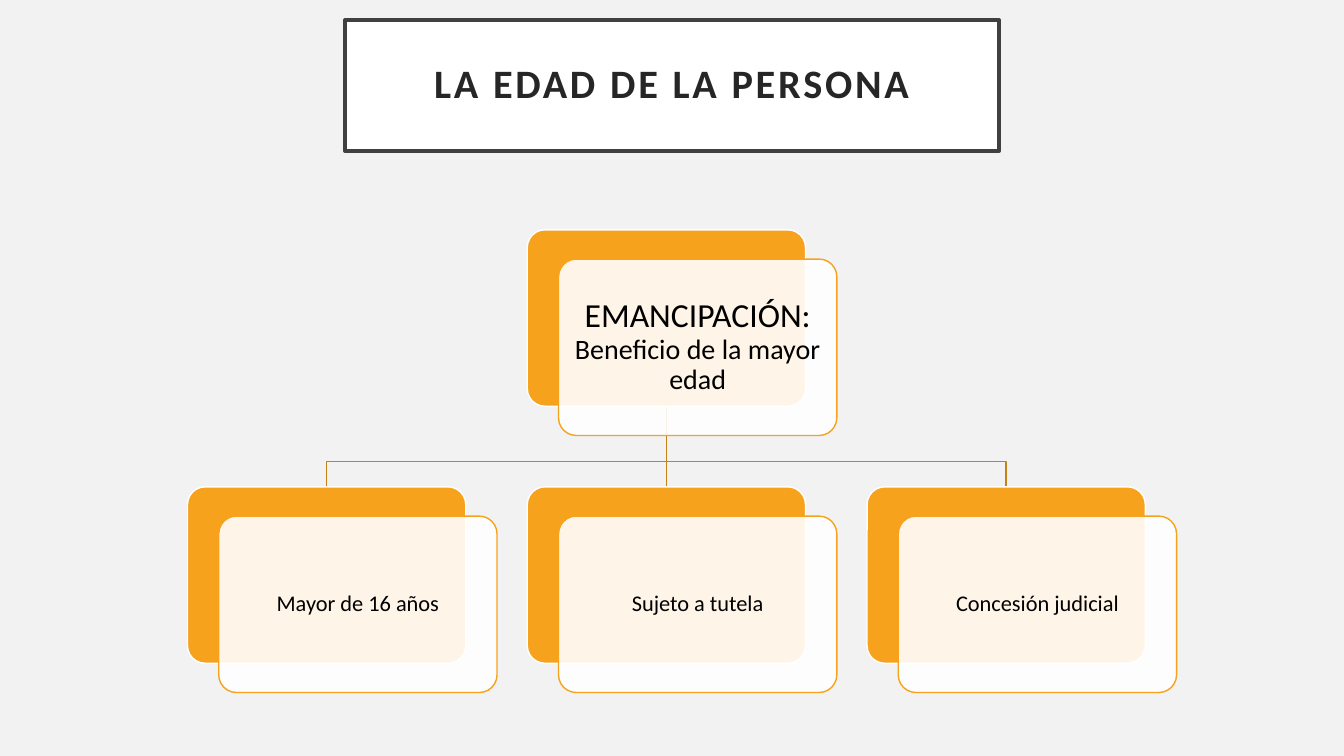
from lxml import etree
from pptx import Presentation
from pptx.dml.color import RGBColor
from pptx.enum.shapes import MSO_CONNECTOR, MSO_SHAPE
from pptx.enum.text import MSO_ANCHOR, MSO_AUTO_SIZE, PP_ALIGN
from pptx.oxml.ns import qn
from pptx.util import Inches, Pt

ORANGE, BROWN, WHITE, BLACK = "F6A21D", "C58217", "FFFFFF", "000000"
CARD_WIDTH, CARD_HEIGHT = 2.76, 1.75
SHIFT_X, SHIFT_Y = 0.31, 0.29
LABEL_MARGIN = 0.05
ROOT_LEFT, ROOT_TOP = 5.23, 2.28
CHILD_TOP, CHILD_STEP = 4.83, 3.37
BEND_Y = 4.58


def color(hex_string):
    return RGBColor.from_string(hex_string)


class Diagram:
    """Holds the text style and the slide that is being built."""

    def __init__(self, slide, font="Calibri"):
        self.slide = slide
        self.shapes = slide.shapes
        self.font = font

    def background(self, fill):
        self.slide.background.fill.solid()
        self.slide.background.fill.fore_color.rgb = color(fill)

    def outline(self, shape, line, width=1):
        shape.line.color.rgb = color(line)
        shape.line.width = Pt(width)

    def add_text(self, shape, runs, inset, ink=BLACK, bold=False, spacing=0):
        frame = shape.text_frame
        frame.word_wrap = True
        frame.auto_size = MSO_AUTO_SIZE.NONE
        frame.vertical_anchor = MSO_ANCHOR.MIDDLE
        frame.margin_left = frame.margin_right = Inches(inset)
        frame.margin_top = frame.margin_bottom = Inches(inset)
        paragraph = frame.paragraphs[0]
        paragraph.alignment = PP_ALIGN.CENTER
        paragraph.line_spacing = 0.9
        for text, size in runs:
            run = paragraph.add_run()
            run.text = text
            run.font.name = self.font
            run.font.size = Pt(size)
            run.font.bold = bold
            run.font.color.rgb = color(ink)
            if spacing:
                run._r.get_or_add_rPr().set("spc", str(spacing * 100))

    def title(self, text):
        title = self.shapes.title
        title.left, title.top = Inches(3.42), Inches(0.2)
        title.width, title.height = Inches(6.49), Inches(1.3)
        title.fill.solid()
        title.fill.fore_color.rgb = color(WHITE)
        self.outline(title, "404040", 2.5)
        self.add_text(title, [(text, 28.8)], 0.2, "262626", bold=True, spacing=2)

    def panel(self, left, top, fill, line, opacity=100):
        panel = self.shapes.add_shape(
            MSO_SHAPE.ROUNDED_RECTANGLE, Inches(left), Inches(top),
            Inches(CARD_WIDTH), Inches(CARD_HEIGHT))
        panel.adjustments[0] = 0.1
        panel.shadow.inherit = False
        panel.fill.solid()
        panel.fill.fore_color.rgb = color(fill)
        if opacity < 100:
            tint = panel._element.spPr.find(qn("a:solidFill"))[0]
            etree.SubElement(tint, qn("a:alpha")).set("val", str(opacity * 1000))
        self.outline(panel, line)

    def card(self, left, top, runs, inset):
        front_left, front_top = left + SHIFT_X, top + SHIFT_Y
        self.panel(left, top, ORANGE, WHITE)
        self.panel(front_left, front_top, WHITE, ORANGE, opacity=90)
        label = self.shapes.add_textbox(
            Inches(front_left + LABEL_MARGIN), Inches(front_top + LABEL_MARGIN),
            Inches(CARD_WIDTH - 2 * LABEL_MARGIN),
            Inches(CARD_HEIGHT - 2 * LABEL_MARGIN))
        self.add_text(label, runs, inset)

    def straight_link(self, x, top, bottom):
        link = self.shapes.add_connector(
            MSO_CONNECTOR.STRAIGHT, Inches(x), Inches(top), Inches(x), Inches(bottom))
        self.outline(link, BROWN)
        etree.SubElement(link._element.spPr, qn("a:effectLst"))

    def bent_link(self, start_x, top, end_x, bottom):
        builder = self.shapes.build_freeform(Inches(start_x), Inches(top))
        corners = [(start_x, BEND_Y), (end_x, BEND_Y), (end_x, bottom)]
        builder.add_line_segments(
            [(Inches(x), Inches(y)) for x, y in corners], close=False)
        link = builder.convert_to_shape()
        link.shadow.inherit = False
        link.fill.background()
        self.outline(link, BROWN)


def main():
    presentation = Presentation()
    presentation.slide_width = Inches(13.33)
    presentation.slide_height = Inches(7.5)
    slide = presentation.slides.add_slide(presentation.slide_layouts[5])
    diagram = Diagram(slide)

    # Background and title
    diagram.background("F2F2F2")
    diagram.title("LA EDAD DE LA PERSONA")

    # Links from the root card to its three conditions
    center_x = ROOT_LEFT + CARD_WIDTH / 2
    root_bottom = ROOT_TOP + CARD_HEIGHT
    diagram.bent_link(center_x, root_bottom, center_x + CHILD_STEP, CHILD_TOP)
    diagram.straight_link(center_x, root_bottom, CHILD_TOP)
    diagram.bent_link(center_x, root_bottom, center_x - CHILD_STEP, CHILD_TOP)

    # Root card
    diagram.card(ROOT_LEFT, ROOT_TOP,
                 [("EMANCIPACIÓN: ", 24), ("Beneficio de la mayor edad", 20)], 0.1)

    # Condition cards
    conditions = ["Mayor de 16 años", "Sujeto a tutela", "Concesión judicial"]
    for column, condition in enumerate(conditions, start=-1):
        diagram.card(ROOT_LEFT + column * CHILD_STEP, CHILD_TOP,
                     [(condition, 16)], 0.07)

    presentation.save("out.pptx")


if __name__ == "__main__":
    main()
